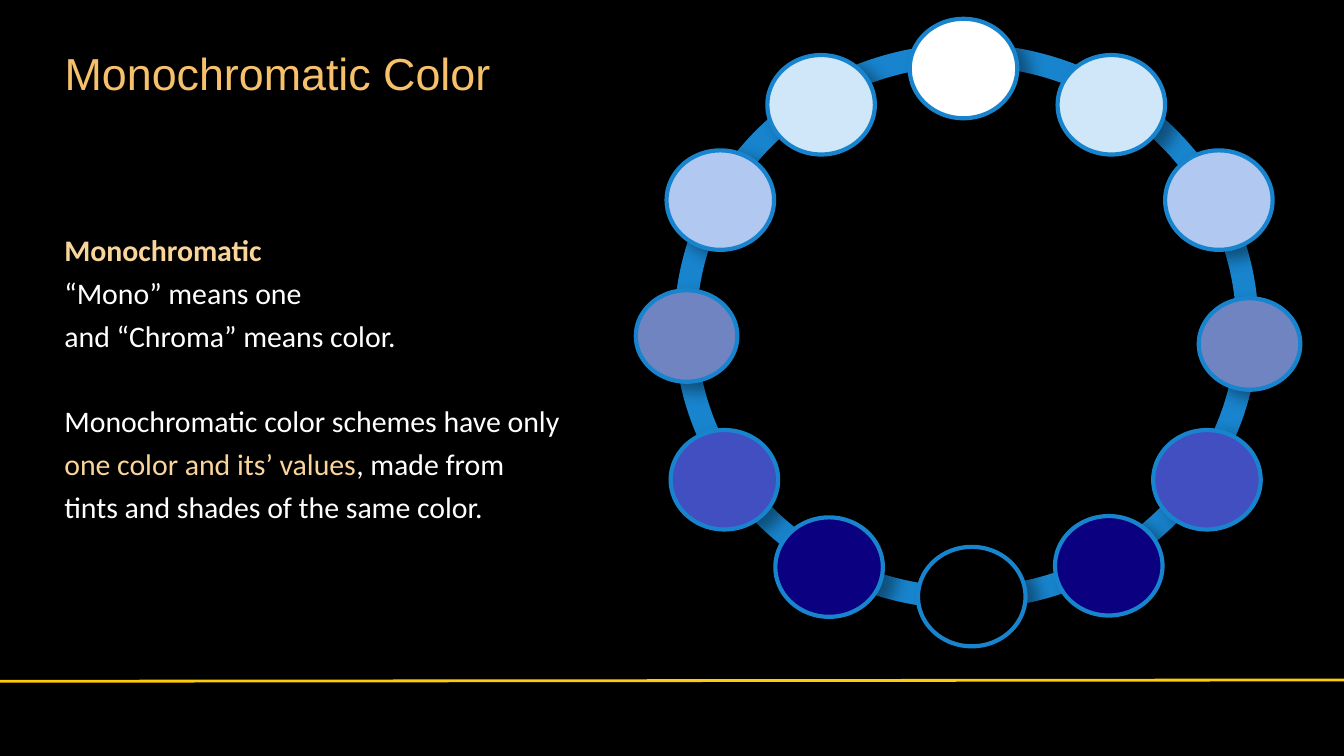
from lxml.etree import SubElement
from pptx import Presentation
from pptx.dml.color import RGBColor
from pptx.enum.shapes import MSO_CONNECTOR, MSO_SHAPE
from pptx.enum.text import MSO_ANCHOR, PP_ALIGN
from pptx.oxml.ns import qn
from pptx.util import Pt

COLORS = {
    "black": "000000", "white": "FFFFFF", "title": "F6C16A", "accent": "F9D59B",
    "rule": "FFCB0A", "ring": "1884CD", "pale": "CFE7F8", "light": "B1C9F0",
    "muted": "7084C1", "strong": "424FC1", "deep": "0B007F",
}

# Offset of each swatch from the ring's top left corner, back to front
SWATCHES = [
    (120.2, -19.4, "white"), (-7.9, 200.9, "strong"), (250.6, 200.9, "strong"),
    (199.4, 0, "pale"), (257, 51.1, "light"), (275, 130.3, "muted"),
    (198, 247, "deep"), (124.6, 263.5, "black"), (48.2, 247.7, "deep"),
    (-26.6, 126, "muted"), (-10.1, 51.1, "light"), (43.9, 0, "pale"),
]
SWATCH_SIZE = (57.6, 53.3)
MUTED_SIZE = (54.4, 49)


def rgb(name):
    return RGBColor.from_string(COLORS[name])


def write(paragraph, text, size=16, font="Calibri", color="white", bold=False):
    run = paragraph.add_run()
    run.text = text
    run.font.size = Pt(size)
    run.font.name = font
    run.font.bold = bold
    run.font.color.rgb = rgb(color)


def cast_shadow(shape, opacity, blur, distance, angle):
    shape.shadow.inherit = False
    effects = shape._element.spPr.find(qn("a:effectLst"))
    shadow = SubElement(effects, qn("a:outerShdw"), blurRad=str(Pt(blur)),
                        dist=str(Pt(distance)), dir=str(angle * 60000),
                        algn="tl", rotWithShape="0")
    tint = SubElement(shadow, qn("a:srgbClr"), val=COLORS["black"])
    SubElement(tint, qn("a:alpha"), val=str(opacity * 1000))


def add_circle(slide, box, line_width, fill=None):
    circle = slide.shapes.add_shape(MSO_SHAPE.OVAL, *map(Pt, box))
    if fill:
        circle.fill.solid()
        circle.fill.fore_color.rgb = rgb(fill)
    else:
        circle.fill.background()
    circle.line.color.rgb = rgb("ring")
    circle.line.width = Pt(line_width)
    return circle


def add_color_wheel(slide, left, top, width, height):
    ring = add_circle(slide, (left, top, width, height), 12)
    cast_shadow(ring, 45, 7, 11, 39)
    for dx, dy, color in SWATCHES:
        size = MUTED_SIZE if color == "muted" else SWATCH_SIZE
        swatch = add_circle(slide, (left + dx, top + dy, *size), 2.25, color)
        cast_shadow(swatch, 40, 8.8, 7, 35)


def add_title(slide, left, top, width, height):
    title = slide.shapes.title
    title.left, title.top = Pt(left), Pt(top)
    title.width, title.height = Pt(width), Pt(height)
    frame = title.text_frame
    frame.vertical_anchor = MSO_ANCHOR.MIDDLE
    heading = frame.paragraphs[0]
    heading.alignment = PP_ALIGN.LEFT
    write(heading, "Monochromatic Color", size=24, font="Arial", color="title")


def add_definition(slide, left, top, width, height):
    frame = slide.shapes.add_textbox(Pt(left), Pt(top), Pt(width), Pt(height)).text_frame
    frame.word_wrap = True
    term = frame.paragraphs[0]
    meaning = frame.add_paragraph()
    scheme = frame.add_paragraph()
    for paragraph in (term, meaning, scheme):
        paragraph.line_spacing = 1.2
    scheme.space_before = Pt(23)
    write(term, "Monochromatic", color="accent", bold=True)
    write(meaning, "“Mono” means one")
    meaning.add_line_break()
    write(meaning, "and “Chroma” means color.")
    write(scheme, "Monochromatic color schemes have only ")
    write(scheme, "one color and its’ values", color="accent")
    write(scheme, ", made from tints and shades of the same color.")


def add_footer_rule(slide, left, start_y, right, end_y):
    rule = slide.shapes.add_connector(
        MSO_CONNECTOR.STRAIGHT, Pt(left), Pt(start_y), Pt(right), Pt(end_y))
    rule.line.color.rgb = rgb("rule")
    rule.line.width = Pt(1.5)
    SubElement(rule._element.spPr, qn("a:effectLst"))


def main():
    deck = Presentation()
    deck.slide_width, deck.slide_height = Pt(720), Pt(405)
    slide = deck.slides.add_slide(deck.slide_layouts[5])
    slide.background.fill.solid()
    slide.background.fill.fore_color.rgb = rgb("black")
    add_footer_rule(slide, 0, 365, 720, 364.3)
    add_title(slide, 27.4, 20.9, 360.7, 36)
    add_definition(slide, 27.4, 116.6, 281.5, 208.8)
    add_color_wheel(slide, 367.2, 29.5, 301, 290.9)
    deck.save("out.pptx")


if __name__ == "__main__":
    main()
